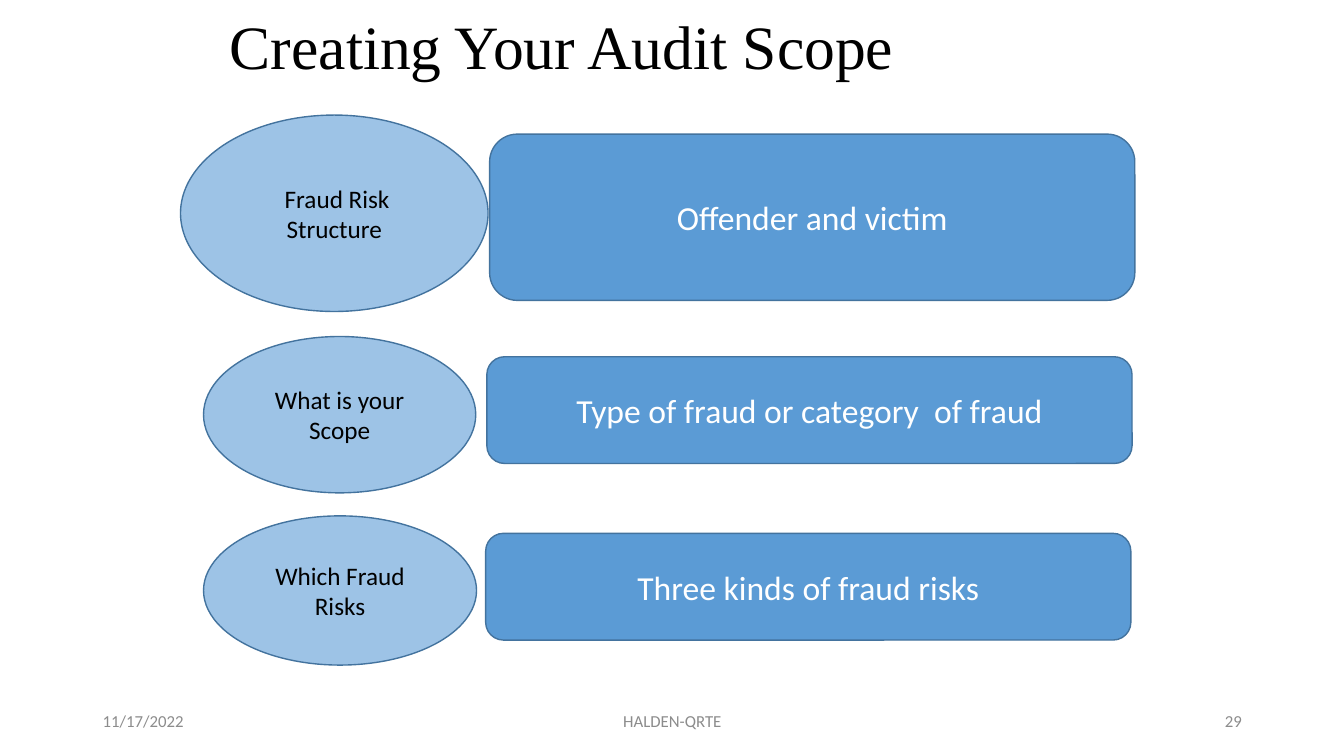
import pptx
import pptx.util
import pptx.dml.color
import pptx.enum.shapes
import pptx.enum.text

Cm = pptx.util.Cm
ALIGN = pptx.enum.text.PP_ALIGN
SHAPE = pptx.enum.shapes.MSO_SHAPE

COLOURS = {
    "text": "000000",
    "inverse": "FFFFFF",
    "question": "9DC3E6",
    "answer": "5B9BD5",
    "outline": "43739E",
    "footer": "8C8C8C",
}


def colour(name):
    return pptx.dml.color.RGBColor.from_string(COLOURS[name])


def write_text(frame, text, size=18, font="Calibri", ink="text",
               align=ALIGN.CENTER, line_spacing=None):
    """Fill a text frame, one paragraph per line of text."""
    frame.word_wrap = True
    frame.auto_size = pptx.enum.text.MSO_AUTO_SIZE.NONE
    frame.vertical_anchor = pptx.enum.text.MSO_ANCHOR.MIDDLE
    for index, line in enumerate(text.split("\n")):
        para = frame.add_paragraph() if index else frame.paragraphs[0]
        para.alignment = align
        para.line_spacing = line_spacing
        span = para.add_run()
        span.text = line
        span.font.size = pptx.util.Pt(size)
        span.font.name = font
        span.font.color.rgb = colour(ink)


class ScopePage:
    """Holds the current slide and draws its elements in one style."""

    def __init__(self, deck):
        self.page = deck.slides.add_slide(deck.slide_layouts.get_by_name("Title Only"))

    def title(self, text, left, top, width, height):
        box = self.page.shapes.title
        box.left, box.top, box.width, box.height = map(Cm, (left, top, width, height))
        write_text(box.text_frame, text, size=44, font="Times New Roman",
                   align=ALIGN.LEFT, line_spacing=0.9)

    def panel(self, kind, text, place, fill, **text_format):
        box = self.page.shapes.add_shape(kind, *map(Cm, place))
        box.shadow.inherit = False
        box.fill.solid()
        box.fill.fore_color.rgb = colour(fill)
        box.line.color.rgb = colour("outline")
        box.line.width = pptx.util.Pt(1)
        write_text(box.text_frame, text, **text_format)

    def question(self, text, place):
        self.panel(SHAPE.OVAL, text, place, "question")

    def answer(self, text, place):
        self.panel(SHAPE.ROUNDED_RECTANGLE, text, place, "answer", size=24, ink="inverse")

    def footer(self, text, left, width, align):
        box = self.page.shapes.add_textbox(Cm(left), Cm(17.65), Cm(width), Cm(1.02))
        write_text(box.text_frame, text, size=12, ink="footer", align=align)


def main():
    deck = pptx.Presentation()
    deck.slide_width, deck.slide_height = Cm(33.87), Cm(19.05)
    scope = ScopePage(deck)
    scope.title("Creating Your Audit Scope", 5.54, 0.18, 22.96, 2.13)

    # Each question sits beside its answer
    answer_width = 16.26
    rows = [
        (" Fraud Risk\nStructure", (4.55, 2.9, 7.75, 4.95),
         "Offender and victim", (12.34, 3.38, answer_width, 4.19)),
        ("What is your Scope", (5.13, 8.48, 6.86, 3.94),
         "Type of fraud or category  of fraud", (12.27, 8.99, answer_width, 2.69)),
        ("Which Fraud Risks", (5.13, 13, 6.88, 3.76),
         "Three kinds of fraud risks", (12.24, 13.44, answer_width, 2.69)),
    ]
    for question, question_place, answer, answer_place in rows:
        scope.answer(answer, answer_place)
        scope.question(question, question_place)

    # Date, organisation and page number
    scope.footer("11/17/2022", 2.34, 7.62, ALIGN.LEFT)
    scope.footer("HALDEN-QRTE", 11.23, 11.43, ALIGN.CENTER)
    scope.footer("29", 23.93, 7.62, ALIGN.RIGHT)

    deck.save("out.pptx")


if __name__ == "__main__":
    main()
